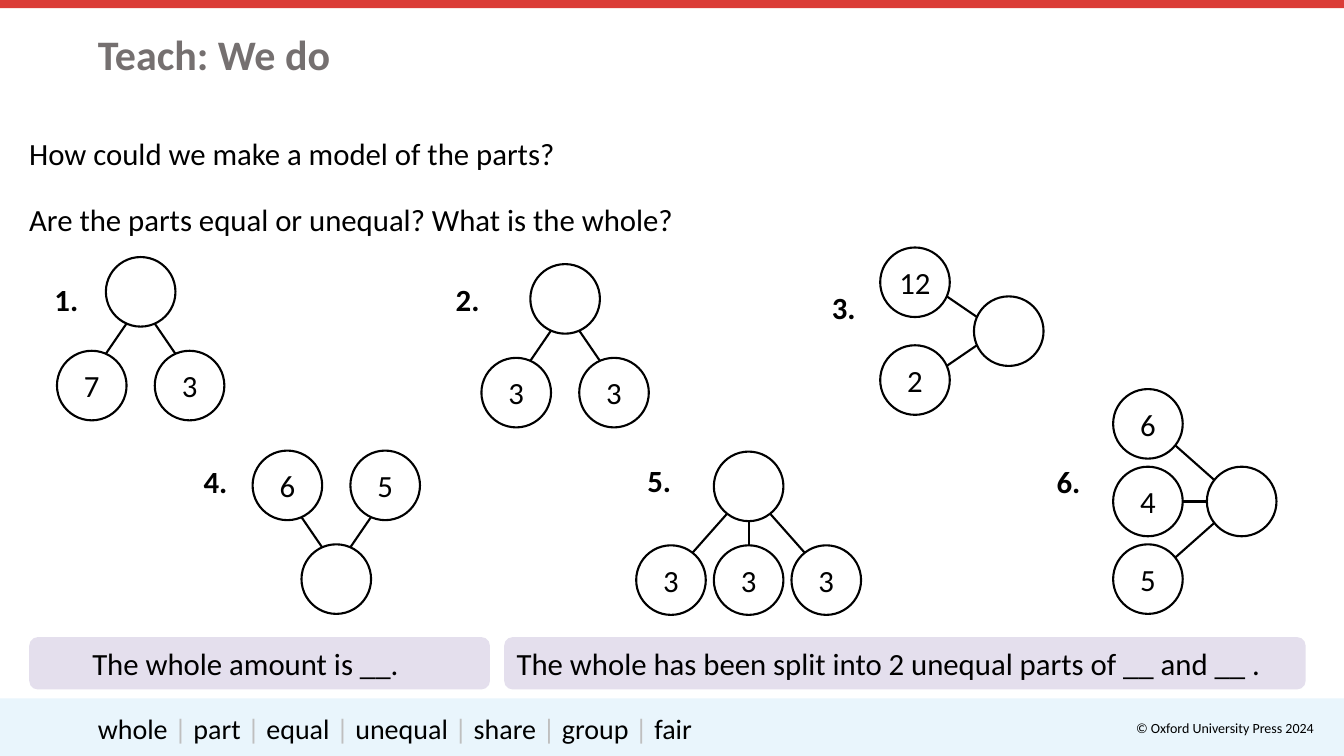
from pptx import Presentation
from pptx.dml.color import RGBColor
from pptx.enum.shapes import MSO_CONNECTOR, MSO_SHAPE
from pptx.enum.text import MSO_ANCHOR, PP_ALIGN
from pptx.oxml.ns import qn
from pptx.util import Inches, Pt
from lxml.etree import SubElement

COLORS = {
    "red": "DB3C36", "sky": "E9F5FC", "lilac": "E4DFED", "white": "FFFFFF",
    "black": "000000", "title": "757070", "rule": "BFBFBF",
}
FONT = "Calibri"
SIDE = 0.69
DEPTH = 0.93
REACH = 0.24
GAPS = {2: 0.97, 3: 0.77}
DOWN, UP, LEFT = (0, 1), (0, -1), (-1, 0)


def color(name):
    return RGBColor.from_string(COLORS[name])


def write(shape, text, size=22, tint="black", bold=False, align=PP_ALIGN.LEFT,
          anchor=MSO_ANCHOR.TOP, inset=(0, 0, 0, 0), lead=None, after=0):
    frame = shape.text_frame
    frame.word_wrap = True
    frame.vertical_anchor = anchor
    (frame.margin_left, frame.margin_top,
     frame.margin_right, frame.margin_bottom) = map(Inches, inset)
    lines = [text] if isinstance(text, str) else text
    for i, line in enumerate(lines):
        para = frame.paragraphs[0] if i == 0 else frame.add_paragraph()
        para.alignment = align
        para.space_after = Pt(after)
        if lead:
            para.line_spacing = lead
        parts = [(line, tint)] if isinstance(line, str) else line
        for words, shade in parts:
            run = para.add_run()
            run.text = words
            run.font.name = FONT
            run.font.size = Pt(size)
            run.font.bold = bold
            run.font.color.rgb = color(shade)


class Canvas:
    def __init__(self, slide):
        self.slide = slide
        self.shapes = slide.shapes

    def text(self, box, text, **style):
        area = self.shapes.add_textbox(*map(Inches, box))
        write(area, text, **style)

    def shape(self, kind, box, fill, line=None):
        item = self.shapes.add_shape(kind, *map(Inches, box))
        item.shadow.inherit = False
        item.fill.solid()
        item.fill.fore_color.rgb = color(fill)
        if line:
            item.line.color.rgb = color(line)
            item.line.width = Pt(1.5)
        else:
            item.line.fill.background()
        return item

    def line(self, start, end):
        link = self.shapes.add_connector(
            MSO_CONNECTOR.STRAIGHT, *map(Inches, (*start, *end)))
        link.line.color.rgb = color("black")
        link.line.width = Pt(1.5)
        SubElement(link._element.spPr, qn("a:effectLst"))

    def circle(self, spot, text=""):
        item = self.shape(MSO_SHAPE.OVAL, (*spot, SIDE, SIDE), "white", "black")
        if text:
            write(item, text, align=PP_ALIGN.CENTER, anchor=MSO_ANCHOR.MIDDLE,
                  inset=(0.06, 0.05, 0.06, 0.05))

    def model(self, label, spot, whole, facing, values):
        self.text((*spot, 0.48, 0.56), label, bold=True, lead=1.5, after=8)
        across, along = facing
        shifts = [(i - (len(values) - 1) / 2) * GAPS[len(values)]
                  for i in range(len(values))]
        parts = [(whole[0] + across * DEPTH + abs(along) * shift,
                  whole[1] + along * DEPTH + abs(across) * shift)
                 for shift in shifts]
        self.shapes = self.slide.shapes.add_group_shape().shapes
        for part in parts:
            start, end = [], []
            for a, b in zip(whole, part):
                sign = (b > a) - (b < a)
                start.append(a + SIDE / 2 - sign * REACH)
                end.append(b + SIDE / 2 + sign * REACH)
            self.line(start, end)
        self.circle(whole)
        for part, value in zip(parts, values):
            self.circle(part, value)
        self.shapes = self.slide.shapes


MODELS = [
    ("1.", (0.54, 2.6), (1.05, 2.55), DOWN, ["7", "3"]),
    ("2.", (4.52, 2.6), (5.26, 2.62), DOWN, ["3", "3"]),
    ("3.", (8.25, 2.68), (9.66, 2.94), LEFT, ["12", "2"]),
    ("4.", (2.02, 4.41), (2.99, 5.4), UP, ["6", "5"]),
    ("5.", (6.42, 4.4), (7.08, 4.48), DOWN, ["3", "3", "3"]),
    ("6.", (10.48, 4.41), (11.97, 4.63), LEFT, ["6", "4", "5"]),
]
STEMS = [
    (0.29, 4.57, 0.6, "The whole amount is __."),
    (5, 7.95, 0.1, "The whole has been split into 2 unequal parts of __ and __ ."),
]
WORDS = ["whole", "part", "equal", "unequal", "share", "group", "fair"]


def main():
    deck = Presentation()
    deck.slide_width, deck.slide_height = Inches(13.33), Inches(7.5)
    page = Canvas(deck.slides.add_slide(deck.slide_layouts[6]))

    page.shape(MSO_SHAPE.RECTANGLE, (0, 0, 13.33, 0.08), "red")
    page.shape(MSO_SHAPE.RECTANGLE, (0, 6.93, 13.33, 0.57), "sky")
    page.text((10.97, 6.93, 2.36, 0.59), "© Oxford University Press 2024",
              size=10, align=PP_ALIGN.RIGHT, anchor=MSO_ANCHOR.MIDDLE,
              inset=(0, 0, 0.3, 0))
    page.text((0.97, 0.34, 5.12, 0.45), "Teach: We do", size=30, tint="title",
              bold=True, anchor=MSO_ANCHOR.MIDDLE, lead=0.9)
    page.text((0.29, 1.15, 12.76, 1.22),
              ["How could we make a model of the parts?",
               "Are the parts equal or unequal? What is the whole?"],
              lead=1.5, after=8)

    for model in MODELS:
        page.model(*model)

    for left, width, indent, text in STEMS:
        panel = page.shape(MSO_SHAPE.ROUNDED_RECTANGLE,
                           (left, 6.32, width, 0.52), "lilac")
        write(panel, text, inset=(indent, 0.05, 0.1, 0.05))

    terms = [(WORDS[0], "black")]
    for word in WORDS[1:]:
        terms += [(" | ", "rule"), (word, "black")]
    page.text((0.97, 6.93, 9.84, 0.59), [terms], size=20,
              anchor=MSO_ANCHOR.MIDDLE)

    deck.save("out.pptx")


if __name__ == "__main__":
    main()
